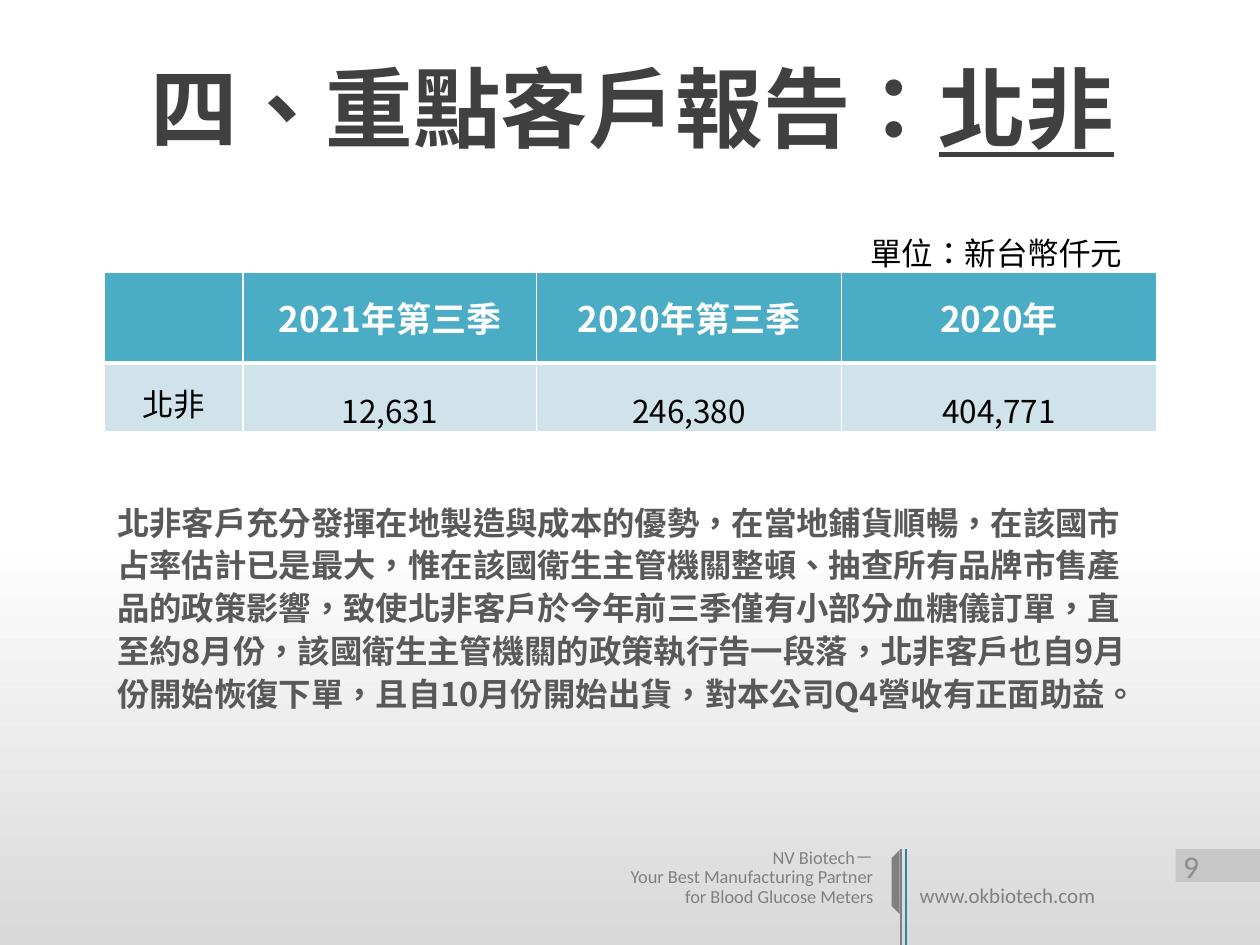
from lxml.etree import SubElement
from pptx import Presentation
from pptx.dml.color import RGBColor
from pptx.enum.shapes import MSO_CONNECTOR, MSO_SHAPE
from pptx.enum.text import MSO_ANCHOR, MSO_AUTO_SIZE, PP_ALIGN
from pptx.oxml.ns import qn
from pptx.util import Inches, Pt

# Content
TITLE = ("四、重點客戶報告：", "北非")
UNIT = "單位：新台幣仟元"
SALES = [
    ("", "2021年第三季", "2020年第三季", "2020年"),
    ("北非", "12,631", "246,380", "404,771"),
]
COMMENTARY = (
    "北非客戶充分發揮在地製造與成本的優勢，在當地鋪貨順暢，在該國市占率估計已是最大，"
    "惟在該國衛生主管機關整頓、抽查所有品牌市售產品的政策影響，"
    "致使北非客戶於今年前三季僅有小部分血糖儀訂單，直至約8月份，"
    "該國衛生主管機關的政策執行告一段落，北非客戶也自9月份開始恢復下單，"
    "且自10月份開始出貨，對本公司Q4營收有正面助益。"
)
SLOGAN = "NV Biotech－\nYour Best Manufacturing Partner\nfor Blood Glucose Meters"
WEBSITE = "www.okbiotech.com"
PAGE = "9"

# Theme: styles are (font, size, colour, bold)
HEAD, CJK, LATIN = "Noto Sans CJK SC", "Noto Sans CJK TC", "Calibri"
THEME = {
    "title": (HEAD, 50, "404040", True),
    "unit": (CJK, 18, "000000", False),
    "header": (HEAD, 20, "FFFFFF", True),
    "cell": (HEAD, 18, "000000", False),
    "body": (HEAD, 18.5, "595959", True),
    "slogan": (LATIN, 10.5, "808080", False),
    "website": (LATIN, 12, "808080", False),
    "page": (LATIN, 18, "8C8C8C", False),
    "gray": "808080", "teal": "31859C", "white": "FFFFFF", "shade": "D9D9D9",
    "header_fill": "4BACC6", "cell_fill": "D0E3EA",
}
COLUMNS, ROWS = (1.1, 2.33, 2.42, 2.5), (0.72, 0.55)


def colour(name):
    return RGBColor.from_string(THEME[name])


def place(shape, left, top, width, height):
    shape.left, shape.top = Inches(left), Inches(top)
    shape.width, shape.height = Inches(width), Inches(height)


def style(frame, role, align=PP_ALIGN.LEFT, spacing=None):
    face, size, rgb, bold = THEME[role]
    for paragraph in frame.paragraphs:
        paragraph.alignment = align
        paragraph.space_before = Pt(0)
        if spacing:
            paragraph.line_spacing = spacing
        for run in paragraph.runs:
            font = run.font
            font.name, font.size, font.bold = face, Pt(size), bold
            font.color.rgb = RGBColor.from_string(rgb)
            # Traditional Chinese centres its punctuation
            font._element.set("lang", "zh-TW")
            east_asian = SubElement(font._element, qn("a:ea"))
            east_asian.set("typeface", face)


def add_label(slide, text, box, role, align=PP_ALIGN.LEFT, spacing=None, wrap=True):
    label = slide.shapes.add_textbox(*map(Inches, box))
    frame = label.text_frame
    frame.text = text
    frame.word_wrap = wrap
    frame.auto_size = MSO_AUTO_SIZE.SHAPE_TO_FIT_TEXT
    style(frame, role, align, spacing)


def add_rule(slide, x, name):
    rule = slide.shapes.add_connector(
        MSO_CONNECTOR.STRAIGHT, Inches(x), Inches(6.74), Inches(x), Inches(7.5))
    rule.line.color.rgb = colour(name)
    rule.line.width = Pt(1.5)
    SubElement(rule._element.spPr, qn("a:effectLst"))


def add_block(slide, kind, box):
    block = slide.shapes.add_shape(kind, *map(Inches, box))
    block.shadow.inherit = False
    block.fill.solid()
    block.fill.fore_color.rgb = colour("gray")
    block.line.fill.background()
    return block


def set_borders(cell, bottom):
    for side, width in (("lnL", 1), ("lnR", 1), ("lnT", 1), ("lnB", bottom)):
        line = SubElement(cell._tc.get_or_add_tcPr(), qn(f"a:{side}"), w=str(Pt(width)))
        fill = SubElement(line, qn("a:solidFill"))
        SubElement(fill, qn("a:srgbClr"), val=THEME["white"])


def add_sales_table(slide):
    table = slide.shapes.add_table(
        len(ROWS), len(COLUMNS), Inches(0.83), Inches(2.16),
        Inches(sum(COLUMNS)), Inches(sum(ROWS))).table
    for column, width in zip(table.columns, COLUMNS):
        column.width = Inches(width)
    for r, (height, values) in enumerate(zip(ROWS, SALES)):
        table.rows[r].height = Inches(height)
        role = "cell" if r else "header"
        for c, value in enumerate(values):
            cell = table.cell(r, c)
            cell.text = value
            cell.vertical_anchor = MSO_ANCHOR.BOTTOM if r else MSO_ANCHOR.MIDDLE
            if r and c:
                cell.margin_left = cell.margin_right = cell.margin_top = Inches(0.01)
                cell.margin_bottom = 0
            set_borders(cell, bottom=1 if r else 3)
            cell.fill.solid()
            cell.fill.fore_color.rgb = colour(role + "_fill")
            style(cell.text_frame, role, PP_ALIGN.CENTER)


def main():
    deck = Presentation()
    deck.slide_width, deck.slide_height = Inches(10), Inches(7.5)
    slide = deck.slides.add_slide(deck.slide_layouts[1])

    # Background: white fading to gray at the foot
    backdrop = slide.background.fill
    backdrop.gradient()
    backdrop.gradient_angle = 270
    for stop, position, name in zip(backdrop.gradient_stops, (0.56, 1), ("white", "shade")):
        stop.position = position
        stop.color.rgb = colour(name)

    # Footer
    add_rule(slide, 7.15, "gray")
    stripe = add_block(slide, MSO_SHAPE.DIAGONAL_STRIPE, (6.96, 6.82, 0.36, 0.36))
    stripe.adjustments[0] = 0.75
    stripe.rotation = 225
    stripe._element.spPr.find(qn("a:xfrm")).set("flipH", "1")
    add_rule(slide, 7.19, "teal")
    add_label(slide, SLOGAN, (4.76, 6.69, 2.27, 0.56), "slogan", PP_ALIGN.RIGHT, Pt(11))
    add_label(slide, WEBSITE, (7.2, 7, 1.89, 0.26), "website", spacing=Pt(11))

    # Title
    title = slide.shapes.title
    place(title, 0.63, 0.22, 8.78, 1.25)
    heading = title.text_frame
    heading.text = TITLE[0]
    region = heading.paragraphs[0].add_run()
    region.text = TITLE[1]
    region.font.underline = True
    heading.vertical_anchor = MSO_ANCHOR.MIDDLE
    heading.auto_size = MSO_AUTO_SIZE.NONE
    style(heading, "title", PP_ALIGN.CENTER)

    # Page number
    page = add_block(slide, MSO_SHAPE.RECTANGLE, (9.33, 6.74, 0.67, 0.26))
    tint = page._element.spPr.find(qn("a:solidFill"))[0]
    SubElement(tint, qn("a:alpha"), val="25000")
    number = page.text_frame
    number.text = PAGE
    number.vertical_anchor = MSO_ANCHOR.MIDDLE
    number.margin_left = Inches(0.06)
    number.margin_right = number.margin_top = number.margin_bottom = 0
    style(number, "page")

    # Unit and sales table
    add_label(slide, UNIT, (6.81, 1.81, 2.2, 0.6), "unit", wrap=False)
    add_sales_table(slide)

    # Commentary
    body = slide.placeholders[1]
    place(body, 0.83, 3.91, 8.35, 2.28)
    commentary = body.text_frame
    commentary.text = COMMENTARY
    commentary.auto_size = MSO_AUTO_SIZE.NONE
    properties = commentary.paragraphs[0]._p.get_or_add_pPr()
    properties.set("marL", "0")
    properties.set("indent", "0")
    SubElement(properties, qn("a:buNone"))
    style(commentary, "body", spacing=1.1)

    deck.save("out.pptx")


if __name__ == "__main__":
    main()
